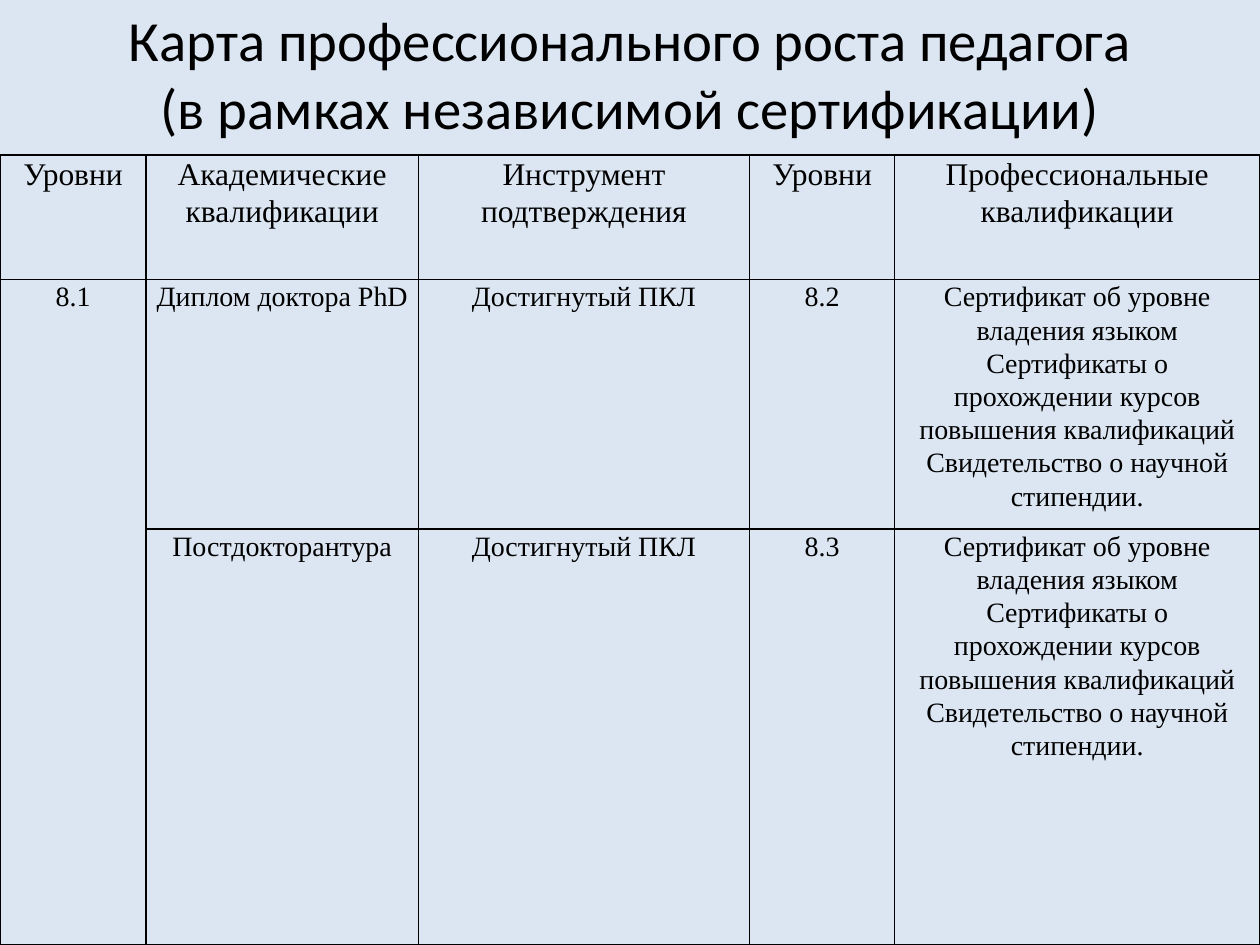
import dataclasses

import pptx
import pptx.dml.color
import pptx.enum.text
import pptx.oxml
import pptx.oxml.ns
import pptx.util

SLIDE_WIDTH, SLIDE_HEIGHT = 10, 7.5
TITLE_HEIGHT = 1.15
COLUMN_WIDTHS = [1.16, 2.16, 2.63, 1.15, 2.9]
ROW_HEIGHTS = [0.99, 1.98, 3.3]
BACKGROUND, INK = "DCE6F2", "000000"
CENTER = pptx.enum.text.PP_ALIGN.CENTER

TITLE_LINES = ["Карта профессионального роста педагога",
               "(в рамках независимой сертификации)"]
HEADINGS = ["Уровни", "Академические квалификации", "Инструмент подтверждения",
            "Уровни", "Профессиональные квалификации"]
CERTIFICATES = ["Сертификат об уровне владения языком",
                "Сертификаты о прохождении курсов повышения квалификаций",
                "Свидетельство о научной стипендии."]


@dataclasses.dataclass
class TableRow:
    cells: list[list[str]]  # the paragraphs of each cell
    size: float


ROWS = [
    TableRow([[heading] for heading in HEADINGS], 18),
    TableRow([["8.1"], ["Диплом доктора PhD"], ["Достигнутый ПКЛ"], ["8.2"], CERTIFICATES], 16),
    TableRow([[], ["Постдокторантура"], ["Достигнутый ПКЛ"], ["8.3"], CERTIFICATES], 16),
]


def color(value: str) -> pptx.dml.color.RGBColor:
    return pptx.dml.color.RGBColor.from_string(value)


def add_run(paragraph, text: str, font_name: str, size: float) -> None:
    run = paragraph.add_run()
    run.text = text
    run.font.name = font_name
    run.font.size = pptx.util.Pt(size)
    run.font.color.rgb = color(INK)


def add_borders(cell, width: float = 1) -> None:
    properties = cell._tc.get_or_add_tcPr()
    for side in ("lnL", "lnR", "lnT", "lnB"):
        properties.append(pptx.oxml.parse_xml(
            f'<a:{side} {pptx.oxml.ns.nsdecls("a")} w="{pptx.util.Pt(width)}">'
            f'<a:solidFill><a:srgbClr val="{INK}"/></a:solidFill></a:{side}>'))


def fill_cell(cell, paragraphs: list[str], size: float) -> None:
    add_borders(cell)
    cell.fill.background()
    cell.margin_left = cell.margin_right = pptx.util.Inches(0.07)
    cell.margin_top = cell.margin_bottom = 0
    frame = cell.text_frame
    for index, text in enumerate(paragraphs):
        paragraph = frame.add_paragraph() if index else frame.paragraphs[0]
        paragraph.alignment = CENTER
        paragraph.line_spacing = 1.07
        add_run(paragraph, text, "Times New Roman", size)


def add_title(slide) -> None:
    title = slide.shapes.title
    title.left = title.top = 0
    title.width = pptx.util.Inches(SLIDE_WIDTH)
    title.height = pptx.util.Inches(TITLE_HEIGHT)
    frame = title.text_frame
    frame.auto_size = pptx.enum.text.MSO_AUTO_SIZE.NONE
    frame.vertical_anchor = pptx.enum.text.MSO_ANCHOR.MIDDLE
    paragraph = frame.paragraphs[0]
    paragraph.alignment = CENTER
    for index, line in enumerate(TITLE_LINES):
        if index:
            paragraph.add_line_break()
        add_run(paragraph, line, "Calibri", 32.4)


def add_growth_table(slide) -> None:
    height = sum(ROW_HEIGHTS)
    table = slide.shapes.add_table(
        len(ROWS), len(COLUMN_WIDTHS), 0, pptx.util.Inches(SLIDE_HEIGHT - height),
        pptx.util.Inches(SLIDE_WIDTH), pptx.util.Inches(height)).table
    table.first_row = table.horz_banding = False
    for column, width in zip(table.columns, COLUMN_WIDTHS):
        column.width = pptx.util.Inches(width)
    for row, row_height, content in zip(table.rows, ROW_HEIGHTS, ROWS):
        row.height = pptx.util.Inches(row_height)
        for cell, paragraphs in zip(row.cells, content.cells):
            fill_cell(cell, paragraphs, content.size)
    # Level 8.1 covers both qualification rows
    table.cell(1, 0).merge(table.cell(2, 0))


def main() -> None:
    presentation = pptx.Presentation()
    presentation.slide_width = pptx.util.Inches(SLIDE_WIDTH)
    presentation.slide_height = pptx.util.Inches(SLIDE_HEIGHT)
    slide = presentation.slides.add_slide(presentation.slide_layouts.get_by_name("Title Only"))
    slide.background.fill.solid()
    slide.background.fill.fore_color.rgb = color(BACKGROUND)
    add_title(slide)
    add_growth_table(slide)
    presentation.save("out.pptx")


if __name__ == "__main__":
    main()
